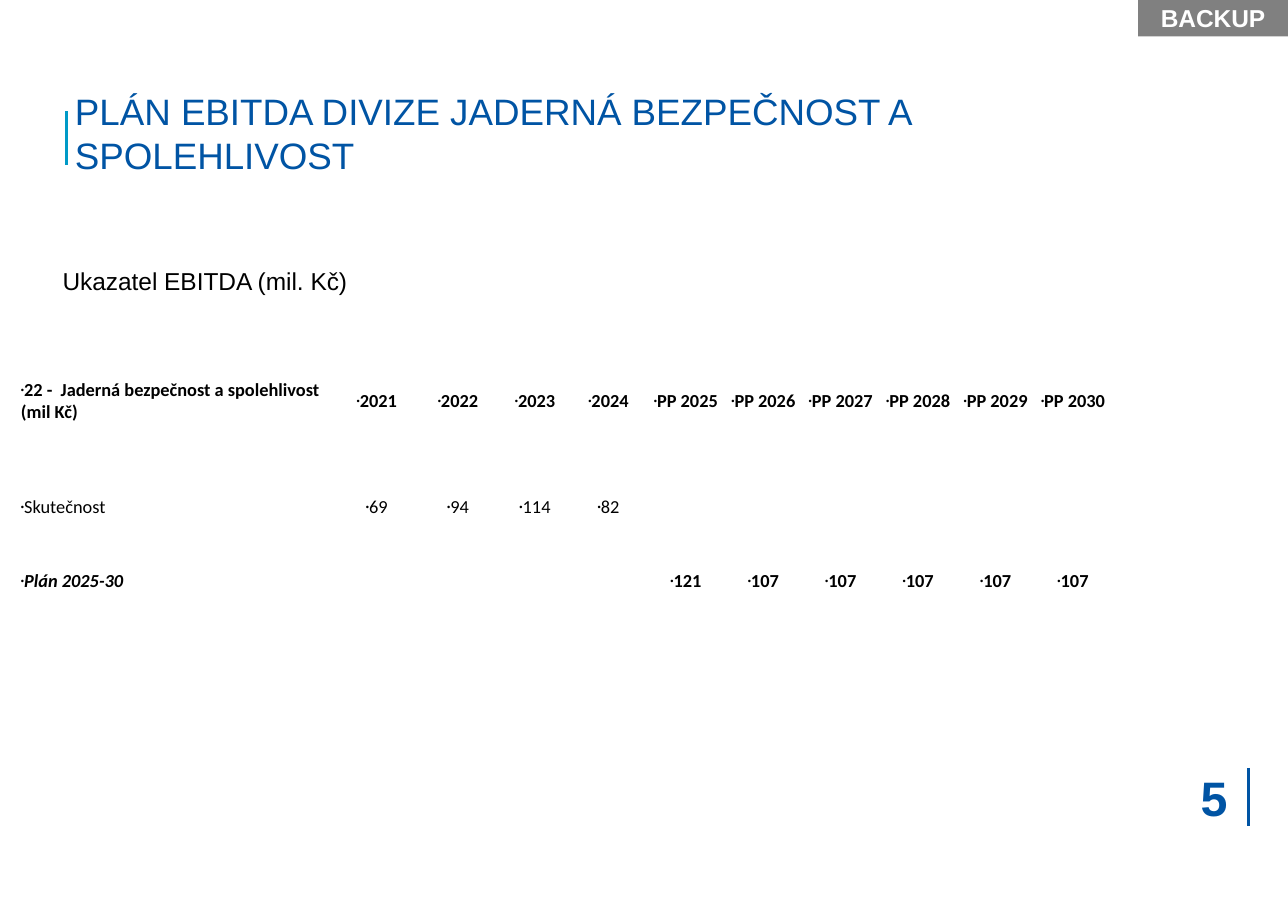
from lxml import etree
from pptx import Presentation
from pptx.dml.color import RGBColor
from pptx.enum import shapes, text
from pptx.oxml import ns
from pptx.util import Pt

BLUE = RGBColor(0x00, 0x54, 0xA4)
TEAL = RGBColor(0x00, 0x9A, 0xC7)
GREY = RGBColor(0x80, 0x80, 0x80)
BLACK = RGBColor(0, 0, 0)
WHITE = RGBColor(255, 255, 255)

LEFT, CENTER, RIGHT = text.PP_ALIGN.LEFT, text.PP_ALIGN.CENTER, text.PP_ALIGN.RIGHT
COLUMN_WIDTHS = [208, 50.6, 55.4, 45.4] + [50.6] * 7
ROW_HEIGHTS = [90.7, 48.2, 48.2]
YEARS = ["2021", "2022", "2023", "2024"] + [f"PP {year}" for year in range(2025, 2031)]
ROWS = [
    ["22 -  Jaderná bezpečnost a spolehlivost (mil Kč)"] + YEARS,
    ["Skutečnost", "69", "94", "114", "82"] + [""] * 6,
    ["Plán 2025-30"] + [""] * 4 + ["121"] + ["107"] * 5,
]


def format_text(paragraph, size, color, bold=False, align=LEFT, name="Arial"):
    paragraph.alignment = align
    for run in paragraph.runs:
        run.font.name = name
        run.font.size = Pt(size)
        run.font.bold = bold
        run.font.color.rgb = color


def set_frame(frame, wording, margins, anchor):
    """Fill a text frame; margins are horizontal and vertical."""
    horizontal, vertical = margins
    frame.word_wrap = True
    frame.margin_left = frame.margin_right = Pt(horizontal)
    frame.margin_top = frame.margin_bottom = Pt(vertical)
    frame.vertical_anchor = anchor
    frame.text = wording


def add_text(slide, box, wording, size, color, bold=False, align=LEFT,
             margins=(0, 0), anchor=text.MSO_ANCHOR.MIDDLE):
    shape = slide.shapes.add_textbox(*map(Pt, box))
    set_frame(shape.text_frame, wording, margins, anchor)
    format_text(shape.text_frame.paragraphs[0], size, color, bold, align)


def add_vertical_rule(slide, x, top, bottom, color):
    connector = slide.shapes.add_connector(
        shapes.MSO_CONNECTOR.STRAIGHT, Pt(x), Pt(top), Pt(x), Pt(bottom))
    connector.line.color.rgb = color
    connector.line.width = Pt(2)
    etree.SubElement(connector.element.spPr, ns.qn("a:effectLst"))


def add_badge(slide, box, wording):
    shape = slide.shapes.add_shape(shapes.MSO_SHAPE.RECTANGLE, *map(Pt, box))
    shape.shadow.inherit = False
    shape.fill.solid()
    shape.fill.fore_color.rgb = GREY
    shape.line.fill.background()
    set_frame(shape.text_frame, wording, (4.3, 2.2), text.MSO_ANCHOR.MIDDLE)
    format_text(shape.text_frame.paragraphs[0], 16, WHITE, True, CENTER)


def add_bullet(paragraph):
    properties = paragraph._p.get_or_add_pPr()
    properties.set("marL", "0")
    properties.set("indent", "0")
    for tag, attribute, value in (("a:buSzPct", "val", "50000"),
                                  ("a:buFont", "typeface", "Arial"),
                                  ("a:buChar", "char", "•")):
        etree.SubElement(properties, ns.qn(tag)).set(attribute, value)


def fill_cell(cell, wording, bold, align):
    cell.fill.background()
    cell.vertical_anchor = text.MSO_ANCHOR.MIDDLE
    cell.margin_left = cell.margin_right = cell.margin_top = Pt(0.7)
    cell.margin_bottom = Pt(0)
    if wording:
        cell.text_frame.text = wording
        paragraph = cell.text_frame.paragraphs[0]
        add_bullet(paragraph)
        format_text(paragraph, 12, BLACK, bold, align, "Calibri")


def add_plan_table(slide, left, top):
    frame = slide.shapes.add_table(
        len(ROWS), len(COLUMN_WIDTHS), Pt(left), Pt(top),
        Pt(sum(COLUMN_WIDTHS)), Pt(sum(ROW_HEIGHTS)))
    table = frame.table
    table.first_row = table.horz_banding = False
    for column, width in zip(table.columns, COLUMN_WIDTHS):
        column.width = Pt(width)
    for row, height in zip(table.rows, ROW_HEIGHTS):
        row.height = Pt(height)
    for i, row in enumerate(ROWS):
        for j, wording in enumerate(row):
            fill_cell(table.cell(i, j), wording, i != 1, CENTER if j else LEFT)
    plan_label = table.cell(2, 0).text_frame.paragraphs[0]
    plan_label.runs[0].font.italic = True


def main():
    presentation = Presentation()
    presentation.slide_width, presentation.slide_height = Pt(841.7), Pt(595.4)
    slide = presentation.slides.add_slide(presentation.slide_layouts[6])

    add_vertical_rule(slide, 815.8, 501.8, 540, BLUE)
    add_vertical_rule(slide, 43.2, 72.7, 108, TEAL)
    add_text(slide, (49, 55.4, 688.3, 62.6),
             "PLÁN EBITDA DIVIZE JADERNÁ BEZPEČNOST A SPOLEHLIVOST", 24, BLUE)
    add_text(slide, (737.3, 501.8, 64.8, 38.2), "5", 31.6, BLUE, True, RIGHT)
    add_text(slide, (33.8, 170.6, 607, 26.6), "Ukazatel EBITDA (mil. Kč)", 16, BLACK,
             margins=(7.2, 3.6), anchor=text.MSO_ANCHOR.TOP)
    add_badge(slide, (743.8, 0, 97.9, 23.8), "BACKUP")
    add_plan_table(slide, 13, 216.7)

    presentation.save("out.pptx")


if __name__ == "__main__":
    main()
